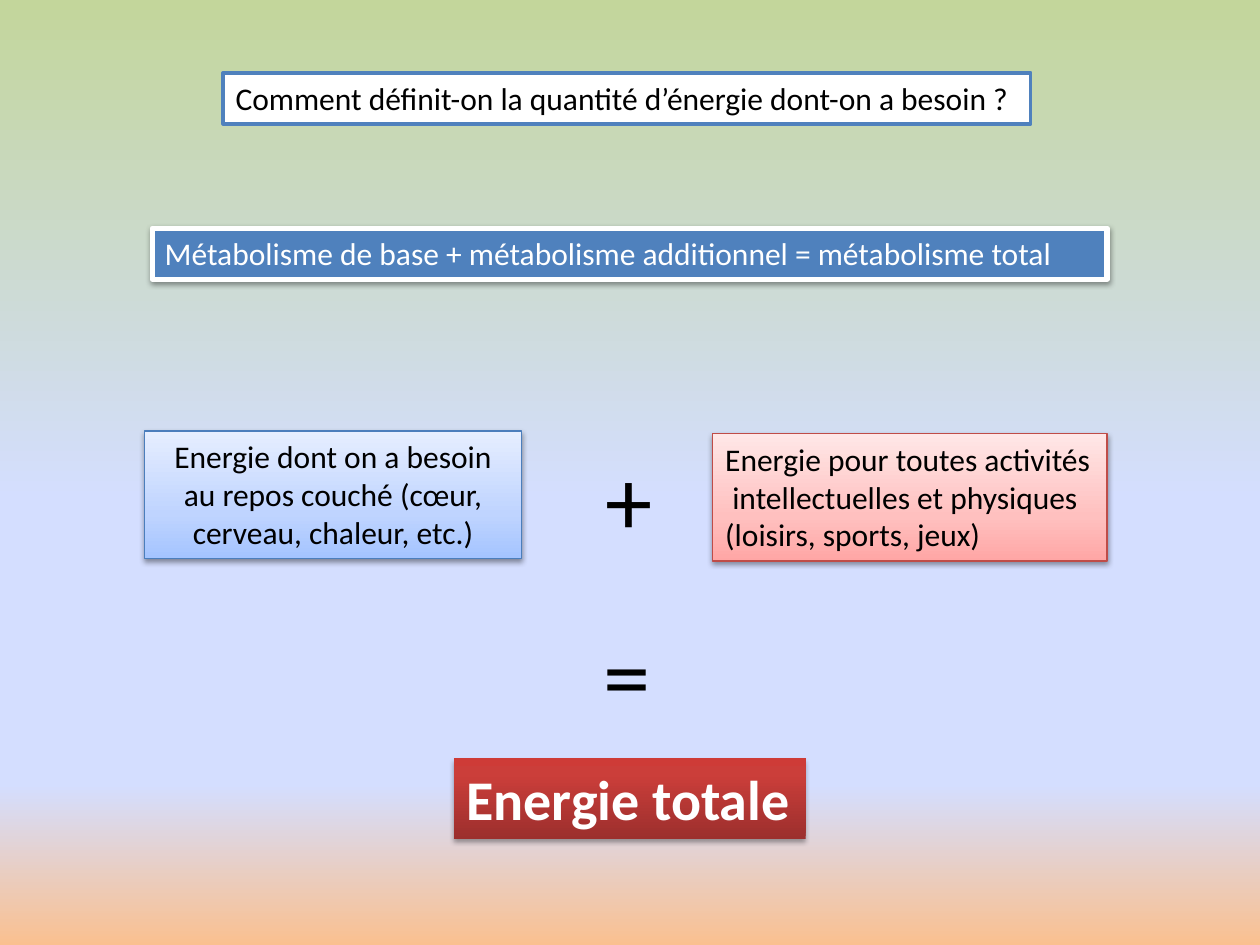
from lxml import etree
from pptx import Presentation
from pptx.dml.color import RGBColor
from pptx.enum.shapes import MSO_SHAPE
from pptx.enum.text import MSO_ANCHOR, MSO_AUTO_SIZE, PP_ALIGN
from pptx.oxml.ns import qn
from pptx.util import Cm, Pt

RECTANGLE = MSO_SHAPE.RECTANGLE
TOP = MSO_ANCHOR.TOP
GROW = MSO_AUTO_SIZE.SHAPE_TO_FIT_TEXT
LEFT, CENTER = PP_ALIGN.LEFT, PP_ALIGN.CENTER

BLACK = RGBColor(0x00, 0x00, 0x00)
WHITE = RGBColor(0xFF, 0xFF, 0xFF)
BLUE = RGBColor(0x4F, 0x81, 0xBD)
BLUE_EDGE = RGBColor(0x4B, 0x7E, 0xBC)
RED_EDGE = RGBColor(0xBF, 0x4C, 0x48)

# Gradients: (position in percent, colour)
SKY = [(0, RGBColor(0xC3, 0xD6, 0x9B)), (53, RGBColor(0xD4, 0xDE, 0xFF)),
       (83, RGBColor(0xD4, 0xDE, 0xFF)), (100, RGBColor(0xFA, 0xC0, 0x90))]
PALE_BLUE = [(0, RGBColor(0xA4, 0xC4, 0xFF)), (35, RGBColor(0xBF, 0xD4, 0xFF)),
             (100, RGBColor(0xE6, 0xEE, 0xFF))]
PALE_RED = [(0, RGBColor(0xFF, 0xA6, 0xA5)), (35, RGBColor(0xFF, 0xC0, 0xBF)),
            (100, RGBColor(0xFF, 0xE7, 0xE7))]
DEEP_RED = [(0, RGBColor(0x9C, 0x2F, 0x2D)), (80, RGBColor(0xCB, 0x3E, 0x3A)),
            (100, RGBColor(0xCE, 0x3B, 0x37))]


def add_child(parent, tag, **attributes):
    values = {name: str(value) for name, value in attributes.items()}
    return etree.SubElement(parent, qn(tag), values)


def set_gradient(fill, owner, stops, angle):
    """Fill with any number of stops; the angle runs clockwise in degrees."""
    fill.gradient()
    gradient = next(owner.iter(qn("a:gradFill")))
    for child in list(gradient):
        gradient.remove(child)
    stop_list = add_child(gradient, "a:gsLst")
    for position, color in stops:
        stop = add_child(stop_list, "a:gs", pos=position * 1000)
        add_child(stop, "a:srgbClr", val=color)
    add_child(gradient, "a:lin", ang=angle * 60000, scaled=0)


def set_shadow(box, opacity, distance):
    effects = next(box.element.iter(qn("a:effectLst")))
    shadow = add_child(effects, "a:outerShdw", blurRad=Pt(3.1), dist=Pt(distance),
                       dir=90 * 60000, rotWithShape=0)
    color = add_child(shadow, "a:srgbClr", val=BLACK)
    add_child(color, "a:alpha", val=opacity * 1000)


def write_text(box, text, size=18, color=BLACK, bold=False, align=LEFT,
               wrap=False, font="Calibri"):
    frame = box.text_frame
    frame.word_wrap = wrap
    frame.auto_size = GROW
    frame.vertical_anchor = TOP
    for index, line in enumerate(text.split("\n")):
        para = frame.add_paragraph() if index else frame.paragraphs[0]
        para.alignment = align
        span = para.add_run()
        span.text = line
        span.font.name = font
        span.font.size = Pt(size)
        span.font.bold = bold
        span.font.color.rgb = color


class Board:
    """Holds the current slide and draws its elements."""

    def __init__(self, page):
        self.page = page

    def background(self, stops):
        set_gradient(self.page.background.fill, self.page.element, stops, 90)

    def panel(self, place, text, fill, edge=None, edge_width=0.75,
              shadow=(38, 1.6), **text_format):
        box = self.page.shapes.add_shape(RECTANGLE, *map(Cm, place))
        box.shadow.inherit = False
        if isinstance(fill, list):
            set_gradient(box.fill, box.element, fill, 270)
        else:
            box.fill.solid()
            box.fill.fore_color.rgb = fill
        if edge is None:
            box.line.fill.background()
        else:
            box.line.color.rgb = edge
            box.line.width = Pt(edge_width)
        if shadow:
            set_shadow(box, *shadow)
        write_text(box, text, **text_format)

    def sign(self, left, top, text):
        box = self.page.shapes.add_textbox(Cm(left), Cm(top), Cm(1.47), Cm(2.57))
        write_text(box, text, size=54)


def main():
    deck = Presentation()
    deck.slide_width, deck.slide_height = Cm(25.4), Cm(19.05)
    board = Board(deck.slides.add_slide(deck.slide_layouts[6]))
    board.background(SKY)

    # Question and formula
    board.panel((4.5, 1.47, 16.28, 1.03),
                "Comment définit-on la quantité d’énergie dont-on a besoin ?",
                WHITE, BLUE, 2, shadow=None)
    board.panel((3.07, 4.6, 19.25, 1.03),
                "Métabolisme de base + métabolisme additionnel = métabolisme total",
                BLUE, WHITE, 3, color=WHITE)

    # The two energies that add up
    board.panel((2.92, 8.69, 7.59, 2.57),
                "Energie dont on a besoin au repos couché (cœur, cerveau, chaleur, etc.)",
                PALE_BLUE, BLUE_EDGE, align=CENTER, wrap=True)
    board.sign(11.96, 8.76, "+")
    board.panel((14.37, 8.74, 7.95, 2.57),
                "Energie pour toutes activités\n intellectuelles et physiques\n"
                "(loisirs, sports, jeux)",
                PALE_RED, RED_EDGE)

    # Total
    board.sign(11.91, 12.29, "=")
    board.panel((9.15, 15.29, 7.09, 1.62), "Energie totale", DEEP_RED,
                shadow=(35, 1.8), size=32, color=WHITE, bold=True)

    deck.save("out.pptx")


if __name__ == "__main__":
    main()
